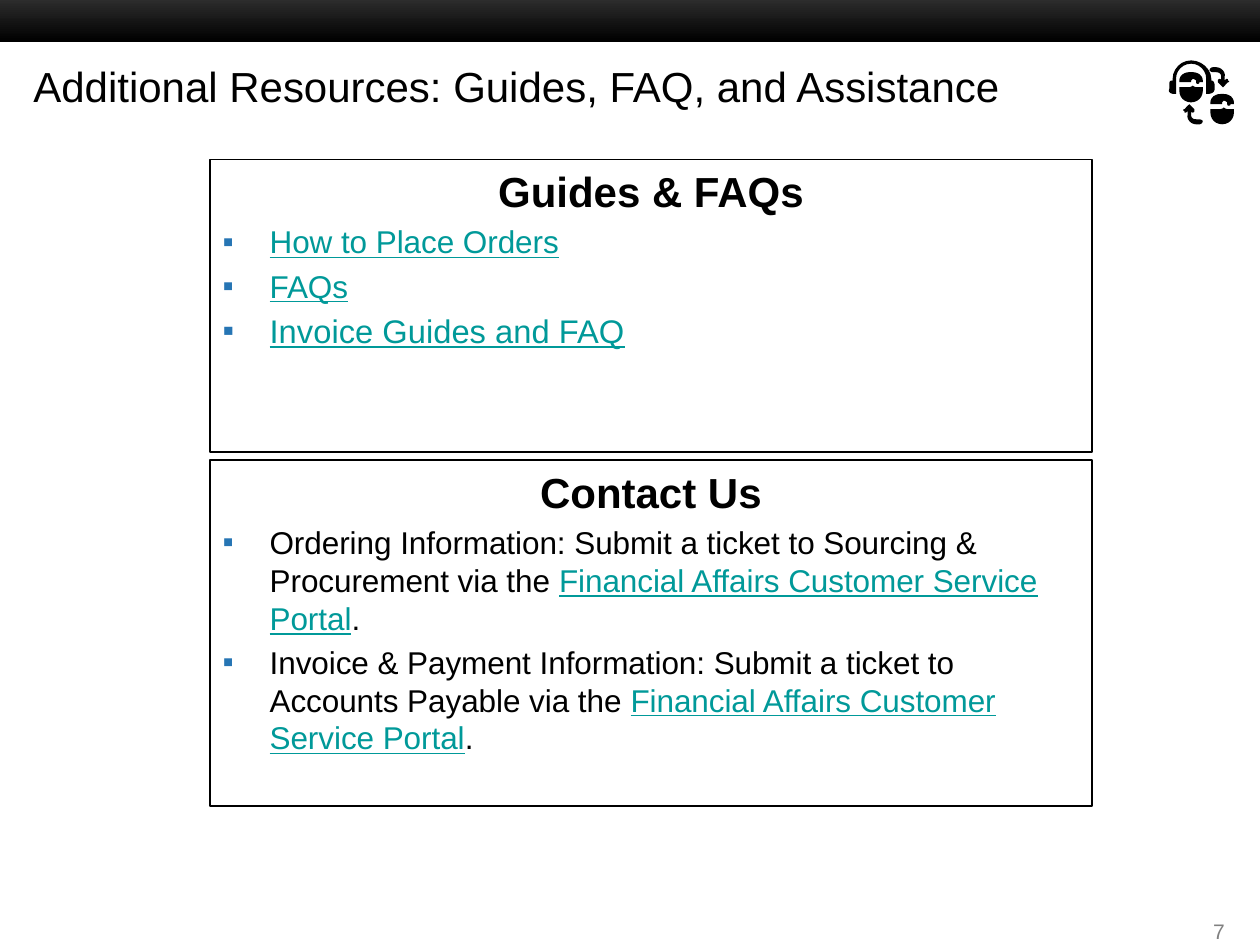
from lxml import etree
from pptx import Presentation
from pptx.dml.color import RGBColor
from pptx.enum.shapes import MSO_SHAPE
from pptx.enum.text import MSO_ANCHOR, PP_ALIGN
from pptx.oxml.ns import qn
from pptx.util import Inches, Pt

RECT = MSO_SHAPE.RECTANGLE
TOP = MSO_ANCHOR.TOP
LEFT, CENTER, RIGHT = PP_ALIGN.LEFT, PP_ALIGN.CENTER, PP_ALIGN.RIGHT
HUES = {"ink": "000000", "bar": "333333", "link": "009999",
        "mark": "2675B4", "page": "808080"}

# Icon outlines in hundredths of an inch: pairs are corners, sixes are curves.
BAND = [(14, 0), (8, 0, 3, 5, 3, 11), (3, 12), (1, 12, 1, 13, 1, 15), (1, 17),
        (0, 19, 2, 20, 4, 20), (5, 20), (5, 11), (5, 6, 9, 2, 14, 2),
        (19, 2, 23, 6, 23, 11), (23, 20), (24, 20), (26, 20, 28, 19, 28, 17),
        (28, 15), (28, 13, 27, 12, 26, 12), (26, 11), (26, 5, 20, 0, 14, 0)]
HAIR = [(6, 0), (3, 0, 0, 2, 0, 5), (0, 6), (4, 6), (7, 6), (7, 5),
        (7, 5, 8, 4, 8, 4), (9, 4, 10, 5, 10, 5), (10, 6),
        (10, 6, 10, 7, 11, 7), (11, 7, 12, 7, 12, 6), (14, 6), (14, 5),
        (14, 2, 11, 0, 8, 0)]
FACE = [(8, 8), (7, 9, 6, 9, 4, 9), (0, 9), (0, 11), (0, 15, 3, 18, 7, 18),
        (11, 18, 14, 15, 14, 11), (14, 9), (12, 9), (10, 9, 9, 9, 8, 8)]
ARROW = [(2, 0), (1, 0, 0, 1, 0, 2), (0, 2, 1, 3, 2, 3), (4, 3),
         (6, 3, 7, 4, 7, 6), (7, 8), (7, 7, 6, 7, 6, 7), (6, 7, 5, 7, 5, 8),
         (5, 9), (7, 11), (8, 12), (9, 11), (11, 9), (12, 9, 12, 8, 11, 8),
         (11, 7, 11, 7, 10, 7), (9, 8), (9, 6), (10, 3, 7, 0, 4, 0)]

PORTAL = ("Financial Affairs Customer Service Portal", "link")
GUIDES = [[("How to Place Orders", "link")], [("FAQs", "link")],
          [("Invoice Guides and FAQ", "link", 14)]]
CONTACT = [
    [("Ordering Information: Submit a ticket to Sourcing & Procurement via the ",
      "ink"), PORTAL, (".", "ink")],
    [("Invoice & Payment Information: Submit a ticket to Accounts Payable via the ",
      "ink"), PORTAL, (".", "ink")]]


def rgb(name):
    return RGBColor.from_string(HUES[name])


def write(para, text, size=13.5, hue="ink", bold=False, align=LEFT):
    """Add one run; link-coloured text is underlined."""
    para.alignment = align
    run = para.add_run()
    run.text = text
    font = run.font
    font.name, font.size, font.bold = "Arial", Pt(size), bold
    font.underline = hue == "link"
    font.color.rgb = rgb(hue)


def bullet(para):
    props = para._p.get_or_add_pPr()
    props.set("marL", str(Inches(0.28)))
    props.set("indent", str(-Inches(0.28)))
    tint = etree.SubElement(props, qn("a:buClr"))
    etree.SubElement(tint, qn("a:srgbClr"), val=HUES["mark"])
    etree.SubElement(props, qn("a:buFont"), typeface="Arial")
    etree.SubElement(props, qn("a:buChar"), char="▪")
    para.space_before = Pt(2.7)


def label(slide, box, text, **form):
    frame = slide.shapes.add_textbox(*map(Inches, box)).text_frame
    frame.word_wrap = True
    write(frame.paragraphs[0], text, **form)


def banner(slide, box):
    bar = slide.shapes.add_shape(RECT, *map(Inches, box))
    bar.shadow.inherit = False
    bar.line.fill.background()
    bar.fill.gradient()
    bar.fill.gradient_angle = 270
    for stop, hue in zip(bar.fill.gradient_stops, ("bar", "ink")):
        stop.color.rgb = rgb(hue)


def panel(slide, box, head, items):
    """Outlined box with a centred heading over bulleted lines."""
    card = slide.shapes.add_shape(RECT, *map(Inches, box))
    card.shadow.inherit = False
    card.fill.background()
    card.line.color.rgb = rgb("ink")
    card.line.width = Pt(0.75)
    frame = card.text_frame
    frame.word_wrap, frame.vertical_anchor = True, TOP
    frame.margin_left = frame.margin_right = Pt(5.4)
    frame.margin_top = frame.margin_bottom = Pt(2.7)
    write(frame.paragraphs[0], head, size=18, bold=True, align=CENTER)
    for item in items:
        para = frame.add_paragraph()
        bullet(para)
        for text, hue, *size in item:
            write(para, text, hue=hue, size=size[0] if size else 13.5)


def trace(steps, count=6):
    """Turn corners and cubic curves into a list of points."""
    points = []
    for step in steps:
        if len(step) == 2:
            points.append(step)
            continue
        knots = [points[-1], step[:2], step[2:4], step[4:]]
        for i in range(1, count + 1):
            t = i / count
            u = 1 - t
            parts = (u ** 3, 3 * u * u * t, 3 * u * t * t, t ** 3)
            points.append(tuple(sum(w * k[axis] for w, k in zip(parts, knots))
                                for axis in (0, 1)))
    return points


def icon(slide, left, top):
    """Two heads, one with a headset, linked by a pair of arrows."""
    group = slide.shapes.add_group_shape()
    for steps, x, y, turn in ((ARROW, 25, 4, 1), (ARROW, 21, 38, -1),
                              (BAND, 0, 0, 1),
                              (HAIR, 7, 7, 1), (FACE, 7, 7, 1),
                              (HAIR, 25.5, 20, 1), (FACE, 25.5, 20, 1)):
        points = [(Inches(left + (x + turn * a) / 100),
                   Inches(top + (y + turn * b) / 100)) for a, b in trace(steps)]
        pen = group.shapes.build_freeform(*points[0])
        pen.add_line_segments(points[1:], close=True)
        shape = pen.convert_to_shape()
        shape.shadow.inherit = False
        shape.fill.solid()
        shape.fill.fore_color.rgb = rgb("ink")
        shape.line.fill.background()


def main():
    deck = Presentation()
    deck.slide_width = Inches(7.5)
    deck.slide_height = deck.slide_width * 3 // 4
    slide = deck.slides.add_slide(deck.slide_layouts[6])
    banner(slide, (0, -0.04, 7.5, 0.29))
    label(slide, (0.1, 0.31, 6.28, 0.4),
          "Additional Resources: Guides, FAQ, and Assistance", size=18)
    panel(slide, (1.25, 2.74, 5.25, 2.06), "Contact Us", CONTACT)
    panel(slide, (1.25, 0.95, 5.25, 1.74), "Guides & FAQs", GUIDES)
    icon(slide, 6.95, 0.36)
    label(slide, (6.23, 5.42, 1.16, 0.12), "7", size=9, hue="page", align=RIGHT)
    deck.save("out.pptx")


if __name__ == "__main__":
    main()
